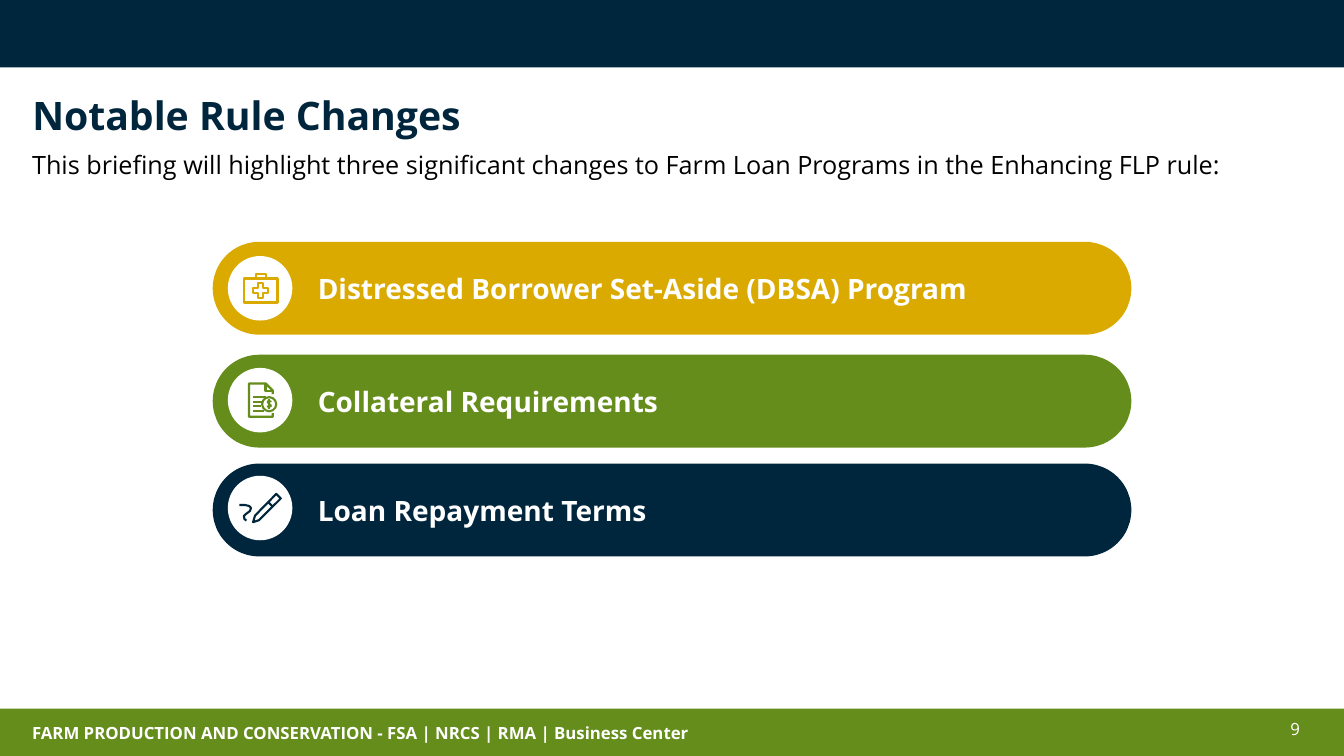
from pptx import Presentation
from pptx.dml.color import RGBColor
from pptx.enum.shapes import MSO_CONNECTOR, MSO_SHAPE
from pptx.enum.text import MSO_ANCHOR, PP_ALIGN
from pptx.oxml.ns import qn
from pptx.util import Inches, Pt

WIDTH, HEIGHT = 13.33, 7.5
FONT = "Open Sans"
COLORS = {"navy": "00263E", "green": "658D1B", "gold": "DAAA00",
          "white": "FFFFFF", "black": "000000"}

TITLE = "Notable Rule Changes"
INTRO = ("This briefing will highlight three significant changes to "
         "Farm Loan Programs in the Enhancing FLP rule:")
FOOTER = "FARM PRODUCTION AND CONSERVATION - FSA | NRCS | RMA | Business Center"
PAGE = "9"

ICON_UNITS = 200
KIT = [
    (1.8, True, [(32, 45), (98, 45), (98, 92), (32, 92)]),
    (1.6, False, [(56, 45), (56, 36), (75, 36), (75, 45)]),
    (1.6, True, [(60, 54), (70, 54), (70, 64), (79, 64), (79, 74), (70, 74),
                 (70, 83), (60, 83), (60, 74), (50, 74), (50, 64), (60, 64)]),
]
DOCUMENT = [
    (1.7, False, [(89, 52), (89, 45), (75, 31), (42, 31), (42, 97), (89, 97), (89, 90)]),
    (1.7, False, [(75, 31), (75, 46), (89, 46)]),
    (1.5, False, [(50, 58), (76, 58)]),
    (1.5, False, [(50, 67), (68, 67)]),
    (1.5, False, [(50, 76), (66, 76)]),
    (1.5, False, [(50, 86), (72, 86)]),
    (1, False, [(86, 68), (85, 66), (82, 65), (79, 66), (79, 69), (82, 71),
                (85, 73), (86, 76), (82, 78), (79, 77), (78, 75)]),
    (1, False, [(82, 62), (82, 81)]),
]
COIN = (82, 72, 14)
PEN = [
    (1.5, True, [(50, 92), (54, 79), (96, 36), (105, 45), (62, 88)]),
    (1.5, False, [(80, 52), (89, 61)]),
    (1.5, False, [(23, 58), (34, 58), (42, 60), (46, 64), (44, 70),
                  (36, 76), (32, 80), (33, 86), (37, 89)]),
]
CHANGES = [
    ("Distressed Borrower Set-Aside (DBSA) Program", "gold", 2.41, 2.54, KIT, None),
    ("Collateral Requirements", "green", 3.53, 3.65, DOCUMENT, COIN),
    ("Loan Repayment Terms", "navy", 4.61, 4.72, PEN, None),
]
PILL_LEFT, PILL_WIDTH, PILL_HEIGHT = 2.12, 9.09, 0.9
DISC_LEFT, DISC_SIZE = 2.26, 0.64


def rgb(name):
    return RGBColor.from_string(COLORS[name])


def write(frame, text, size, color, bold=False):
    frame.word_wrap = True
    paragraph = frame.paragraphs[0]
    paragraph.alignment = PP_ALIGN.LEFT
    run = paragraph.add_run()
    run.text = text
    run.font.name = FONT
    run.font.size = Pt(size)
    run.font.bold = bold
    run.font.color.rgb = rgb(color)
    return paragraph


def add_label(slide, box, *style):
    label = slide.shapes.add_textbox(*map(Inches, box))
    write(label.text_frame, *style)


def add_filled(shapes, kind, box, color):
    part = shapes.add_shape(kind, *map(Inches, box))
    part.shadow.inherit = False
    part.fill.solid()
    part.fill.fore_color.rgb = rgb(color)
    part.line.fill.background()
    return part


def set_stroke(part, color, width):
    part.line.color.rgb = rgb(color)
    part.line.width = Pt(width)


def add_stroke(shapes, top, color, width, closed, points):
    if len(points) == 2:
        ends = [Inches(origin + value / ICON_UNITS)
                for point in points
                for origin, value in zip((DISC_LEFT, top), point)]
        stroke = shapes.add_connector(MSO_CONNECTOR.STRAIGHT, *ends)
        properties = stroke._element.spPr
        set_stroke(stroke, color, width)
        properties.append(properties.makeelement(qn("a:effectLst"), {}))
        return
    builder = shapes.build_freeform(*points[0], scale=Inches(1) / ICON_UNITS)
    builder.add_line_segments(points[1:], close=closed)
    stroke = builder.convert_to_shape(Inches(DISC_LEFT), Inches(top))
    stroke.shadow.inherit = False
    stroke.fill.background()
    set_stroke(stroke, color, width)


def add_icon(slide, top, color, strokes, coin):
    icon = slide.shapes.add_group_shape().shapes
    add_filled(icon, MSO_SHAPE.OVAL, (DISC_LEFT, top, DISC_SIZE, DISC_SIZE), "white")
    if coin:
        x, y, radius = (value / ICON_UNITS for value in coin)
        ring = add_filled(icon, MSO_SHAPE.OVAL,
                          (DISC_LEFT + x - radius, top + y - radius, 2 * radius, 2 * radius),
                          "white")
        set_stroke(ring, color, 1.5)
    for width, closed, points in strokes:
        add_stroke(icon, top, color, width, closed, points)


def add_change(slide, text, color, top, disc_top, strokes, coin):
    pill = add_filled(slide.shapes, MSO_SHAPE.ROUNDED_RECTANGLE,
                      (PILL_LEFT, top, PILL_WIDTH, PILL_HEIGHT), color)
    pill.adjustments[0] = 0.5
    set_stroke(pill, color, 1.5)
    frame = pill.text_frame
    frame.margin_left = Inches(0.9)
    frame.margin_right = frame.margin_top = frame.margin_bottom = Inches(0.1)
    frame.vertical_anchor = MSO_ANCHOR.MIDDLE
    write(frame, text, 20, "white", True)
    add_icon(slide, disc_top, color, strokes, coin)


def main():
    deck = Presentation()
    deck.slide_width, deck.slide_height = Inches(WIDTH), Inches(HEIGHT)
    slide = deck.slides.add_slide(deck.slide_layouts[5])

    for top, height, color in [(0, 0.67, "navy"), (7.03, 0.47, "green")]:
        add_filled(slide.shapes, MSO_SHAPE.RECTANGLE, (0, top, WIDTH, height), color)
    add_label(slide, (0.22, 7.12, 7.84, 0.5), FOOTER, 12, "white", True)

    title = slide.shapes.title
    title.left, title.top, title.width, title.height = map(Inches, (0.22, 0.91, 12.78, 0.5))
    title.text_frame.vertical_anchor = MSO_ANCHOR.TOP
    write(title.text_frame, TITLE, 28, "navy", True).line_spacing = 0.9

    add_label(slide, (0.22, 1.43, 12.77, 0.69), INTRO, 18, "black")
    for change in CHANGES:
        add_change(slide, *change)
    add_label(slide, (12.7, 7.08, 0.45, 0.4), PAGE, 12, "white")
    deck.save("out.pptx")


if __name__ == "__main__":
    main()
